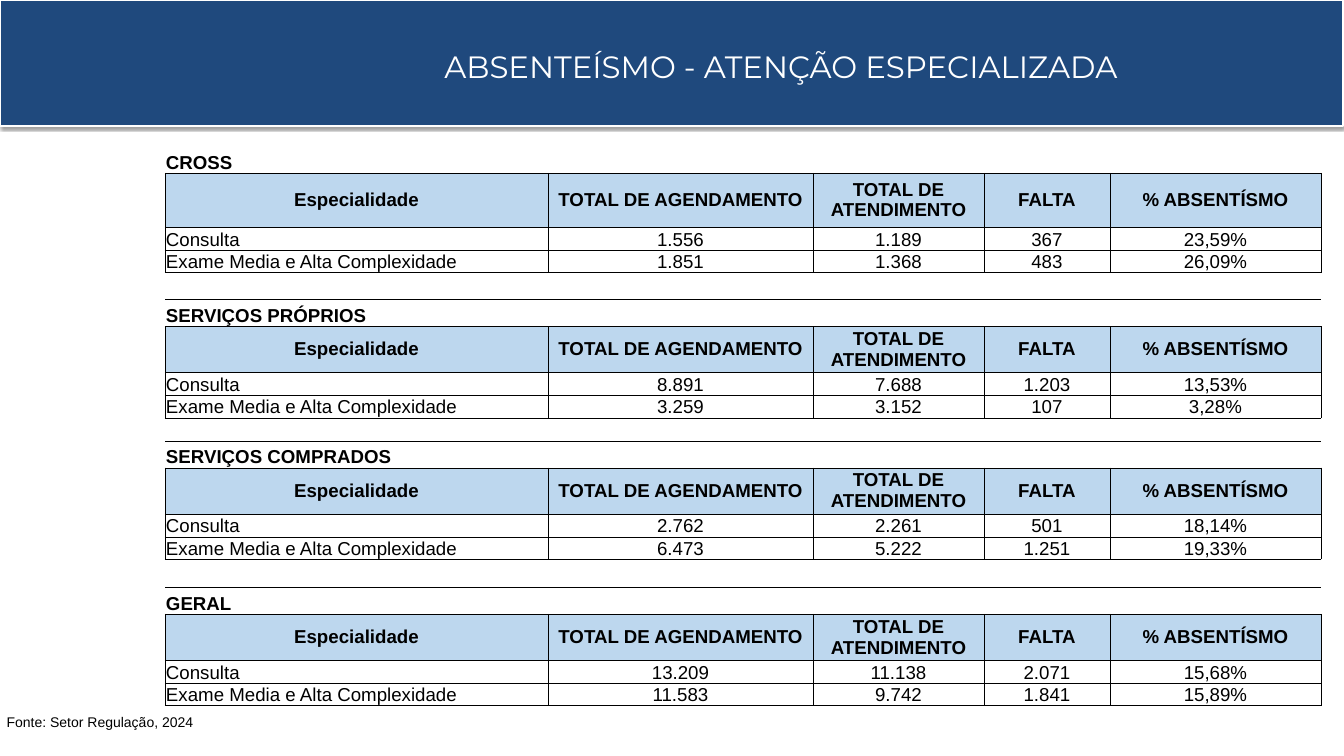
from lxml import etree
from pptx import Presentation, util as u
from pptx.dml.color import RGBColor
from pptx.enum import shapes, text
from pptx.oxml import ns

SCALE = 914400 / 67.2
BLACK, WHITE, NAVY, LIGHT_BLUE = "000000", "FFFFFF", "1F497D", "BDD7EE"


def px(length):
    return u.Emu(round(length * SCALE))


def color(value):
    return RGBColor.from_string(value)


presentation = Presentation()
presentation.slide_width, presentation.slide_height = px(1344), px(756)
slide = presentation.slides.add_slide(presentation.slide_layouts[5])

banner = slide.shapes.add_shape(shapes.MSO_SHAPE.RECTANGLE, 0, 0, px(1343), px(126))
banner.fill.solid()
banner.fill.fore_color.rgb = color(NAVY)
banner.line.color.rgb = color(WHITE)
banner.line.width = u.Pt(3)
effects = etree.SubElement(banner._element.spPr, ns.qn("a:effectLst"))
shadow = etree.SubElement(effects, ns.qn("a:outerShdw"), blurRad="40000", dist="20000", dir="5400000", rotWithShape="0")
shadow_color = etree.SubElement(shadow, ns.qn("a:srgbClr"), val=BLACK)
etree.SubElement(shadow_color, ns.qn("a:alpha"), val="38000")
slide.shapes._spTree.insert(2, banner._element)

title = slide.shapes.title
title.left, title.top, title.width, title.height = px(319), px(26), px(924), px(100)
title.text_frame.text = "ABSENTEÍSMO - ATENÇÃO ESPECIALIZADA"
title.text_frame.vertical_anchor = text.MSO_ANCHOR.TOP
title.text_frame.auto_size = text.MSO_AUTO_SIZE.NONE
paragraph = title.text_frame.paragraphs[0]
paragraph.alignment = text.PP_ALIGN.CENTER
paragraph.line_spacing = 1.5
font = paragraph.runs[0].font
font.name, font.size, font.color.rgb = "Montserrat", u.Pt(33), color(WHITE)

source = slide.shapes.add_textbox(0, px(710), px(1136), px(24))
source.text_frame.word_wrap = True
source.text_frame.text = "Fonte: Setor Regulação, 2024"
font = source.text_frame.paragraphs[0].runs[0].font
font.name, font.size, font.color.rgb = "Arial", u.Pt(15), color(BLACK)

header = ["Especialidade", "TOTAL DE AGENDAMENTO", "TOTAL DE ATENDIMENTO", "FALTA", "% ABSENTÍSMO"]
sections = [
    ("CROSS", 54, 27,
     ["1.556", "1.189", "367", "23,59%"],
     ["1.851", "1.368", "483", "26,09%"]),
    ("SERVIÇOS PRÓPRIOS", 46, 23,
     ["8.891", "7.688", "1.203", "13,53%"],
     ["3.259", "3.152", "107", "3,28%"]),
    ("SERVIÇOS COMPRADOS", 46, 28,
     ["2.762", "2.261", "501", "18,14%"],
     ["6.473", "5.222", "1.251", "19,33%"]),
    ("GERAL", 46, 0,
     ["13.209", "11.138", "2.071", "15,68%"],
     ["11.583", "9.742", "1.841", "15,89%"]),
]
rows = []
for name, header_height, gap, appointments, exams in sections:
    rows += [
        ("name", 27, [name] + [""] * 4),
        ("header", header_height, header),
        ("data", 23, ["Consulta"] + appointments),
        ("data", 22, ["Exame Media e Alta Complexidade"] + exams),
    ]
    if gap:
        rows.append(("gap", gap, [""] * 5))

column_widths = [383, 265, 171, 126, 211]
row_heights = [height for kind, height, values in rows]
frame = slide.shapes.add_table(len(rows), len(column_widths), px(165), px(146),
                               px(sum(column_widths)), px(sum(row_heights)))
table = frame.table
table.first_row = table.horz_banding = False
table._tbl.tblPr.find(ns.qn("a:tableStyleId")).text = "{2D5ABB26-0587-4C30-8999-92F81FD0307C}"
for column, width in zip(table.columns, column_widths):
    column.width = px(width)

borders = {"name": "B", "header": "LRTB", "data": "LRTB", "gap": "T"}
for row, (kind, height, values) in zip(table.rows, rows):
    row.height = px(height)
    for index, (cell, value) in enumerate(zip(row.cells, values)):
        cell.margin_left = cell.margin_right = px(1)
        cell.margin_top = cell.margin_bottom = 0
        cell.vertical_anchor = text.MSO_ANCHOR.MIDDLE if kind == "header" else text.MSO_ANCHOR.BOTTOM
        for side in borders[kind]:
            line = etree.SubElement(cell._tc.get_or_add_tcPr(), ns.qn("a:ln" + side), w="6350")
            line_fill = etree.SubElement(line, ns.qn("a:solidFill"))
            etree.SubElement(line_fill, ns.qn("a:srgbClr"), val=BLACK)
        if kind == "header":
            cell.fill.solid()
            cell.fill.fore_color.rgb = color(LIGHT_BLUE)
        else:
            cell.fill.background()
        if value:
            cell.text_frame.text = value
            paragraph = cell.text_frame.paragraphs[0]
            centered = kind == "header" or index > 0
            paragraph.alignment = text.PP_ALIGN.CENTER if centered else text.PP_ALIGN.LEFT
            font = paragraph.runs[0].font
            font.name, font.size, font.color.rgb = "Arial", u.Pt(20), color(BLACK)
            font.bold = kind != "data"

presentation.save("out.pptx")
